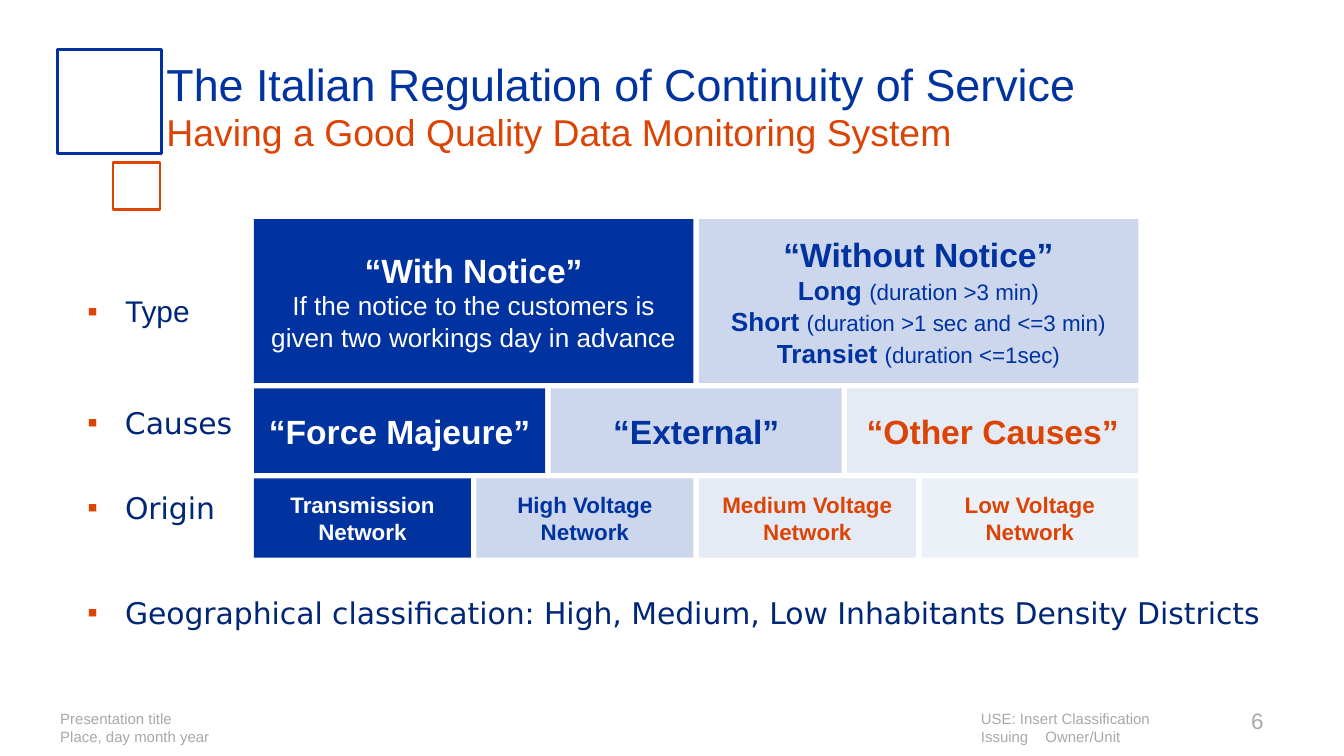
from lxml import etree
from pptx import Presentation
from pptx.dml.color import RGBColor
from pptx.enum.shapes import MSO_SHAPE as Shape
from pptx.enum.text import MSO_ANCHOR as Anchor, PP_ALIGN as Align
from pptx.oxml.ns import qn
from pptx.util import Inches, Pt

BLUE, ORANGE, NAVY, GRAY = "0033A0", "DC4405", "002678", "A7A8AA"
WHITE, PALE, PALER, PALEST = "FFFFFF", "CCD6EC", "E5EBF5", "ECF1F8"


def color(value):
    return RGBColor.from_string(value)


def write(shape, lines, fill, font="Arial", align=Align.LEFT):
    """Each line is a list of (text, size, bold) runs; returns the last paragraph."""
    frame = shape.text_frame
    frame.word_wrap = True
    for index, runs in enumerate(lines):
        para = frame.add_paragraph() if index else frame.paragraphs[0]
        para.alignment = align
        for text, size, bold in runs:
            if text == "\n":
                para.add_line_break()
                continue
            span = para.add_run()
            span.text = text
            span.font.name = font
            span.font.size = Pt(size)
            span.font.bold = bold
            span.font.color.rgb = color(fill)
    return para


deck = Presentation()
deck.slide_width = Inches(10)
deck.slide_height = deck.slide_width * 9 // 16
page = deck.slides.add_slide(deck.slide_layouts[6])

# Decorative squares
for left, top, side, line in [(0.43, 0.37, 0.77, BLUE), (0.84, 1.21, 0.35, ORANGE)]:
    square = page.shapes.add_shape(
        Shape.RECTANGLE, Inches(left), Inches(top), Inches(side), Inches(side))
    square.shadow.inherit = False
    square.fill.background()
    square.line.color.rgb = color(line)
    square.line.width = Pt(1.5)

# Title, subtitle and page number
headings = [
    (1.14, 0.37, 7.02, 0.39, "The Italian Regulation of Continuity of Service",
     24, BLUE, Align.LEFT),
    (1.14, 0.76, 8.32, 0.39, "Having a Good Quality Data Monitoring System",
     20, ORANGE, Align.LEFT),
    (8.94, 5.21, 0.56, 0.3, "6", 12, "A8A9AD", Align.RIGHT),
]
for left, top, width, height, text, size, fill, align in headings:
    box = page.shapes.add_textbox(Inches(left), Inches(top), Inches(width), Inches(height))
    write(box, [[(text, size, False)]], fill, align=align)

# Footers
footers = [
    (0.35, 3.94, 0.3, [["Presentation title"], ["Place, day month year"]]),
    (7.2, 2.68, 0.37, [["USE: Insert Classification", "\n", "Issuing\tOwner/Unit"]]),
]
for left, width, height, lines in footers:
    box = page.shapes.add_textbox(Inches(left), Inches(5.23), Inches(width), Inches(height))
    para = write(box, [[(text, 8, False) for text in line] for line in lines], GRAY)
    if "\t" in lines[-1][-1]:
        tabs = etree.SubElement(para._p.get_or_add_pPr(), qn("a:tabLst"))
        etree.SubElement(tabs, qn("a:tab"), pos=str(Inches(0.48)), algn="l")

# Bulleted row labels
labels = [
    (2.14, 1.38, "Type", "Arial", 1),
    (2.97, 1.77, "Causes", "DejaVu Sans", 1),
    (3.6, 1.61, "Origin", "DejaVu Sans", 1),
    (4.33, 9.61, "Geographical classification: High, Medium, Low Inhabitants Density Districts",
     "DejaVu Sans", 1.2),
]
for top, width, text, font, spacing in labels:
    box = page.shapes.add_textbox(Inches(0.55), Inches(top), Inches(width), Inches(0.36))
    frame = box.text_frame
    frame.margin_left = frame.margin_right = Inches(0.09)
    frame.margin_top = frame.margin_bottom = Inches(0.04)
    para = write(box, [[(text, 16, False)]], NAVY, font)
    para.line_spacing = spacing
    props = para._p.get_or_add_pPr()
    props.set("marL", str(Inches(0.29)))
    props.set("indent", str(Inches(-0.28)))
    bullet_color = etree.SubElement(props, qn("a:buClr"))
    etree.SubElement(bullet_color, qn("a:srgbClr"), val=ORANGE)
    etree.SubElement(props, qn("a:buFont"), typeface="Arial")
    etree.SubElement(props, qn("a:buChar"), char="▪")

# Classification grid: every row shares the same total width
GRID_LEFT, GRID_WIDTH, GAP = 1.89, 6.58, 0.04
with_notice = [
    [("“With Notice”", 18, True)],
    [("If the notice to the customers is given two workings day in advance", 14, False)],
]
without_notice = [
    [("“Without Notice”", 18, True)],
    [("Long ", 14, True), ("(duration >3 min)", 12, False)],
    [("Short ", 14, True), ("(duration >1 sec and <=3 min)", 12, False)],
    [("Transiet ", 14, True), ("(duration <=1sec)", 12, False)],
]
causes = [[[(name, 18, True)]] for name in ("“Force Majeure”", "“External”", "“Other Causes”")]
origins = [[[(name + " Network", 12, True)]]
           for name in ("Transmission", "High Voltage", "Medium Voltage", "Low Voltage")]
styles = [(BLUE, WHITE), (PALE, BLUE), (PALER, ORANGE), (PALEST, ORANGE)]

rows = [(1.63, 1.22, [with_notice, without_notice]), (2.89, 0.63, causes), (3.56, 0.59, origins)]
for top, height, cells in rows:
    width = (GRID_WIDTH - GAP * (len(cells) - 1)) / len(cells)
    for column, (lines, (back, ink)) in enumerate(zip(cells, styles)):
        cell = page.shapes.add_shape(
            Shape.RECTANGLE, Inches(GRID_LEFT + column * (width + GAP)), Inches(top),
            Inches(width), Inches(height))
        cell.shadow.inherit = False
        cell.fill.solid()
        cell.fill.fore_color.rgb = color(back)
        cell.line.fill.background()
        cell.text_frame.vertical_anchor = Anchor.MIDDLE
        write(cell, lines, ink, align=Align.CENTER)

deck.save("out.pptx")
